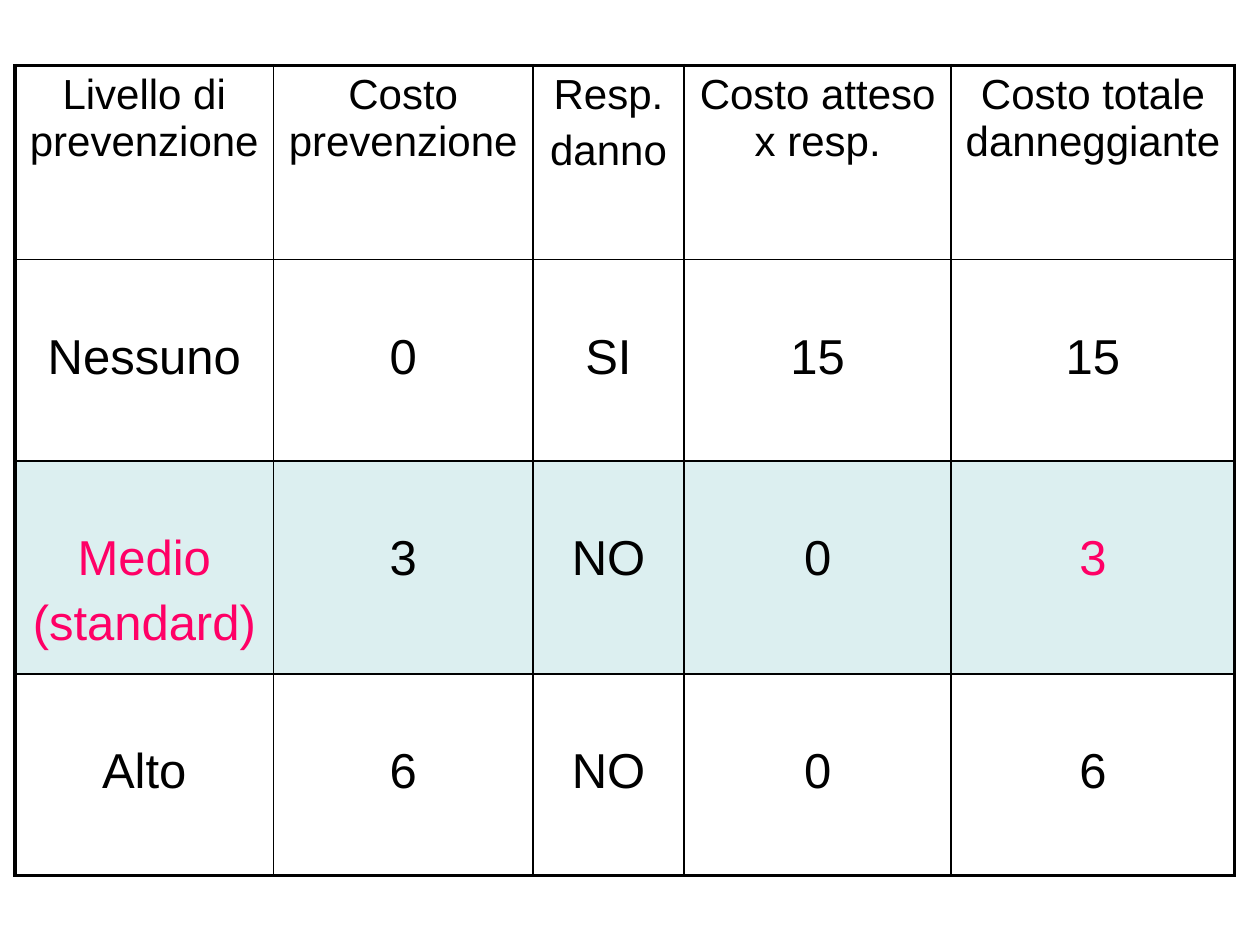
import pptx
import pptx.util
import pptx.dml.color
import pptx.enum.text
import pptx.oxml.ns
import lxml.etree
from pptx.util import Inches, Pt

COLORS = {"text": "000000", "accent": "FF0066", "band": "BBE0E3", "border": "000000"}
A = pptx.oxml.ns.qn("a:srgbClr").split("}")[0] + "}"


def write(tf, text, size=28, color="text", font="Arial"):
    """Fill a text frame with centred text, one paragraph per line."""
    tf.text = text
    for p in tf.paragraphs:
        p.alignment = pptx.enum.text.PP_ALIGN.CENTER
        p.space_before = Pt(size * 0.2)
        for r in p.runs:
            r.font.name = font
            r.font.size = Pt(size)
            r.font.color.rgb = pptx.dml.color.RGBColor.from_string(COLORS[color])


def set_borders(cell, widths):
    """Draw the left, right, top and bottom borders, widths in points."""
    tcPr = cell._tc.get_or_add_tcPr()
    for i, (side, width) in enumerate(zip("LRTB", widths)):
        ln = lxml.etree.Element(A + "ln" + side, w=str(Pt(width)))
        fill = lxml.etree.SubElement(ln, A + "solidFill")
        lxml.etree.SubElement(fill, A + "srgbClr", val=COLORS["border"])
        tcPr.insert(i, ln)


prs = pptx.Presentation()
prs.slide_width, prs.slide_height = Inches(10), Inches(7.5)
s = prs.slides.add_slide(prs.slide_layouts[6])

# Table contents
rows = [
    ["Livello di prevenzione", "Costo prevenzione", "Resp.\ndanno",
     "Costo atteso x resp.", "Costo totale danneggiante"],
    ["Nessuno", "0", "SI", "15", "15"],
    ["Medio\n(standard)", "3", "NO", "0", "3"],
    ["Alto", "6", "NO", "0", "6"],
]
col_widths = [2.05, 2.06, 1.2, 2.12, 2.25]
row_heights = [1.54, 1.6, 1.69, 1.6]
standard_row = 2
last_row, last_col = len(rows) - 1, len(col_widths) - 1
outer, inner = 2.25, 1

# Table grid
table = s.shapes.add_table(len(rows), len(col_widths), Inches(0.12), Inches(0.52),
                           Inches(sum(col_widths)), Inches(sum(row_heights))).table
table.first_row = table.horz_banding = False
for col, width in zip(table.columns, col_widths):
    col.width = Inches(width)
for row, height in zip(table.rows, row_heights):
    row.height = Inches(height)

# Cells
for i, texts in enumerate(rows):
    for j, text in enumerate(texts):
        cell = table.cell(i, j)
        cell.margin_left = cell.margin_right = Inches(0.1)
        cell.margin_top = Inches(0.56 if i else 0.05)
        cell.margin_bottom = Inches(0.05)
        accent = i == standard_row and j in (0, last_col)
        write(cell.text_frame, text, size=28 if i else 24,
              color="accent" if accent else "text")

        # Half-transparent band behind the standard level
        if i == standard_row:
            cell.fill.solid()
            cell.fill.fore_color.rgb = pptx.dml.color.RGBColor.from_string(COLORS["band"])
            clr = cell._tc.tcPr.find(".//" + A + "srgbClr")
            lxml.etree.SubElement(clr, A + "alpha", val="50000")
        else:
            cell.fill.background()

        # Thick frame, thin inner lines
        edges = (j == 0, j == last_col, i == 0, i == last_row)
        set_borders(cell, [outer if edge else inner for edge in edges])

prs.save("out.pptx")
